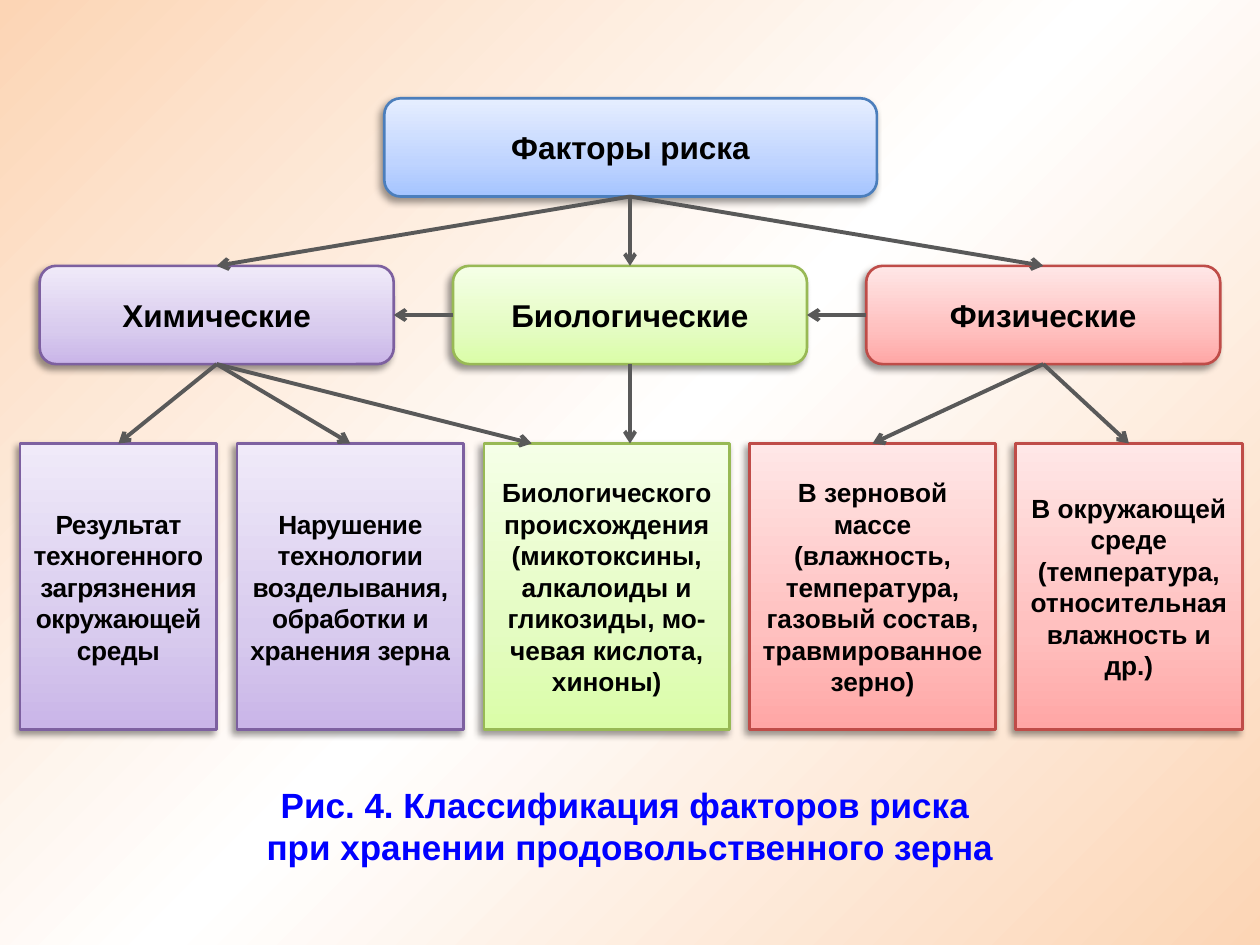
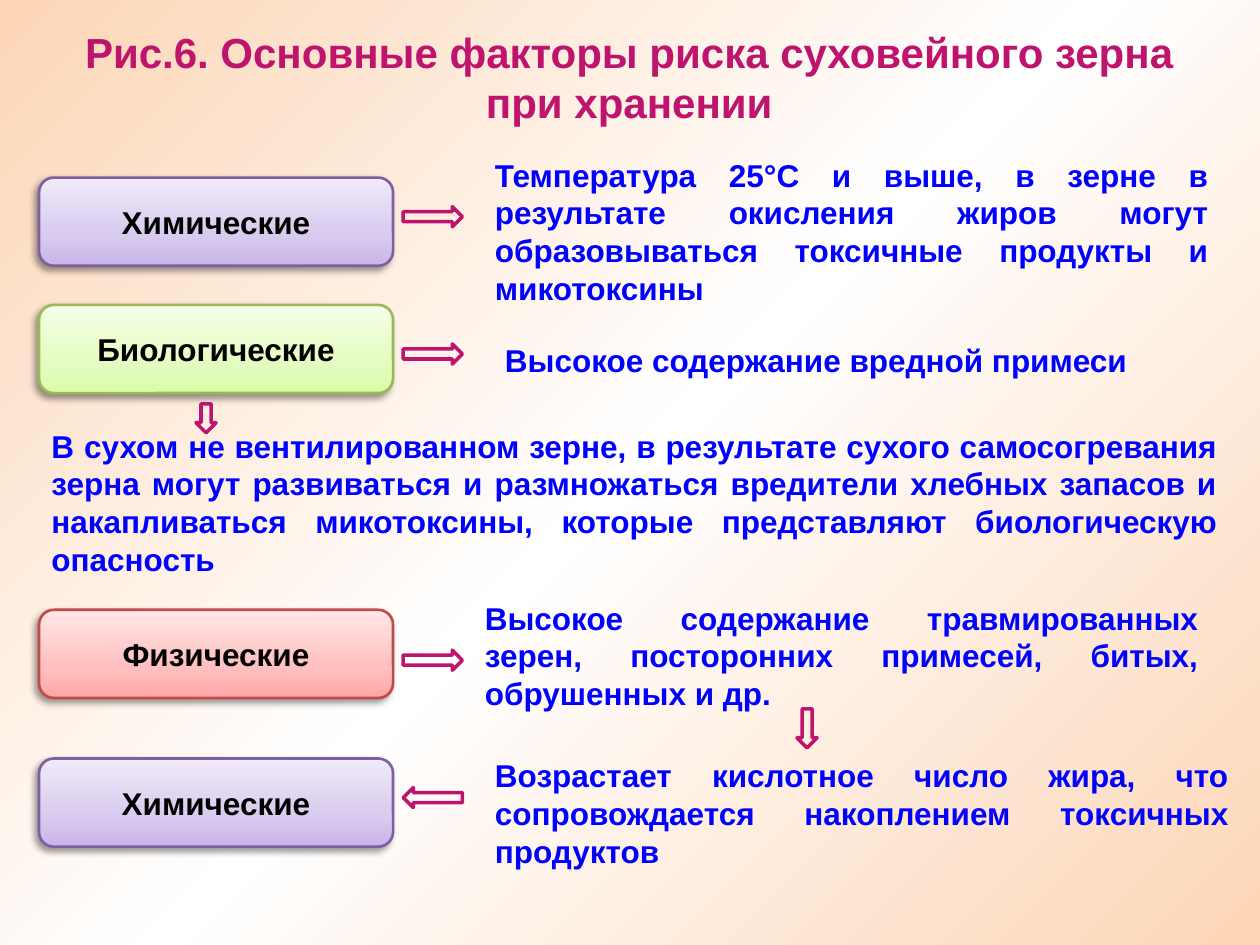
from lxml import etree
from pptx import Presentation
from pptx.dml.color import RGBColor
from pptx.enum.shapes import MSO_CONNECTOR, MSO_SHAPE
from pptx.enum.text import MSO_ANCHOR, MSO_AUTO_SIZE, PP_ALIGN
from pptx.oxml.ns import qn
from pptx.util import Inches, Pt

ROUND = MSO_SHAPE.ROUNDED_RECTANGLE
RECT = MSO_SHAPE.RECTANGLE
ARROW = MSO_SHAPE.RIGHT_ARROW
LINE = MSO_CONNECTOR.STRAIGHT
TOP, MIDDLE = MSO_ANCHOR.TOP, MSO_ANCHOR.MIDDLE
CENTER, JUSTIFY = PP_ALIGN.CENTER, PP_ALIGN.JUSTIFY
GROW = MSO_AUTO_SIZE.SHAPE_TO_FIT_TEXT

FONT = "Arial"
BLACK, BLUE, PINK, GRAY = "000000", "0000FF", "BE146D", "595959"
PEACH = [(0, "FCD5B5"), (50, "FFFFFF"), (100, "FCD5B5")]
THEMES = {
    "root": ("4B7EBC", "A4C4FF", "BFD4FF", "E6EEFF"),
    "chem": ("7D60A0", "C9B5E8", "D8CBEE", "F0EAF9"),
    "bio": ("98B955", "DAFDA7", "E4FCC2", "F5FFE7"),
    "phys": ("BF4C48", "FFA6A5", "FFC0BF", "FFE7E7"),
}
NAMES = {"chem": "Химические", "bio": "Биологические", "phys": "Физические"}

LEAVES = [
    ("chem", 1.56, -0.2, "Результат техногенного загрязнения окружающей среды"),
    ("chem", 1.8, -0.2, "Нарушение технологии возделывания, обработки и хранения зерна"),
    ("bio", 1.95, 0, "Биологического происхождения (микотоксины, алкалоиды и "
                     "гликозиды, мо-чевая кислота, хиноны)"),
    ("phys", 1.95, 0, "В зерновой массе (влажность, температура, газовый состав, "
                      "травмированное зерно)"),
    ("phys", 1.8, 0, "В окружающей среде (температура, относительная влажность и др.)"),
]
CAPTION = ["Рис. 4. Классификация факторов риска ",
           "при хранении продовольственного зерна"]
TITLE = ["Рис.6. Основные факторы риска суховейного зерна при хранении"]

RISKS = [("chem", 1.41), ("bio", 2.42), ("phys", 4.84), ("chem", 6.02)]
NOTES = [
    ((3.83, 1.25, 5.86, 1.17),
     "Температура 25°С и выше, в зерне в результате окисления жиров могут "
     "образовываться токсичные продукты и микотоксины"),
    ((3.91, 2.58, 5.86, 0.55), "Высокое содержание вредной примеси"),
    ((0.31, 3.36, 9.45, 1.25),
     "В сухом не вентилированном зерне, в результате сухого самосогревания зерна "
     "могут развиваться и размножаться вредители хлебных запасов и накапливаться "
     "микотоксины, которые представляют биологическую опасность"),
    ((3.75, 4.69, 5.86, 1.02),
     "Высокое содержание травмированных зерен, посторонних примесей, битых, "
     "обрушенных и др."),
    ((3.83, 5.94, 6.02, 1.02),
     "Возрастает кислотное число жира, что сопровождается накоплением токсичных "
     "продуктов"),
]
ARROWS = [(3.2, 1.64, 0.47, 0), (3.2, 2.73, 0.47, 0), (1.52, 3.24, 0.23, 90),
          (3.2, 5.16, 0.47, 0), (6.25, 5.7, 0.31, 90), (3.2, 6.25, 0.47, 180)]

LEFT, WIDE, GAP = 0.31, 2.81, 0.16
MID, STEP = 5, 3.28
ROOT_Y, KIND_Y, LEAF_Y = 0.78, 2.11, 3.52
TALL, LEAF_H = 0.78, 2.27


def color(code):
    return RGBColor.from_string(code)


def sub(node, tag, **attrs):
    return etree.SubElement(node, qn(tag), {k: str(v) for k, v in attrs.items()})


def blend(fill, node, stops, angle):
    fill.gradient()
    fill.gradient_angle = angle
    ramp = node.find(".//" + qn("a:gsLst"))
    for stop in list(ramp):
        ramp.remove(stop)
    for pos, code in stops:
        sub(sub(ramp, "a:gs", pos=pos * 1000), "a:srgbClr", val=code)


def shade(shape):
    shape.shadow.inherit = False
    effects = shape._element.spPr.find(qn("a:effectLst"))
    drop = sub(effects, "a:outerShdw", blurRad=Pt(4), dist=Pt(3),
               dir=135 * 60000, rotWithShape=0)
    sub(sub(drop, "a:srgbClr", val=BLACK), "a:alpha", val=40000)


def write(shape, lines, size, code, align, anchor, track=0):
    frame = shape.text_frame
    frame.word_wrap = True
    frame.vertical_anchor = anchor
    for i, line in enumerate(lines):
        para = frame.add_paragraph() if i else frame.paragraphs[0]
        para.alignment = align
        run = para.add_run()
        run.text = line
        font = run.font
        font.name, font.size, font.bold = FONT, Pt(size), True
        font.color.rgb = color(code)
        if track:
            run._r.get_or_add_rPr().set("spc", str(round(track * 100)))


def box(slide, kind, form, place, text, size=18, track=0):
    edge, *tones = THEMES[kind]
    shape = slide.shapes.add_shape(form, *map(Inches, place))
    blend(shape.fill, shape._element, zip((0, 35, 100), tones), 90)
    shape.line.color.rgb = color(edge)
    shape.line.width = Pt(1.5)
    shade(shape)
    write(shape, [text], size, BLACK, CENTER, MIDDLE, track)


def label(slide, place, lines, size, code, align=CENTER, anchor=TOP):
    shape = slide.shapes.add_textbox(*map(Inches, place))
    write(shape, lines, size, code, align, anchor)
    if anchor == TOP:
        shape.text_frame.auto_size = GROW


def link(slide, start, end):
    line = slide.shapes.add_connector(LINE, *map(Inches, start + end))
    line.line.color.rgb = color(GRAY)
    line.line.width = Pt(2.25)
    sub(line.line._get_or_add_ln(), "a:tailEnd", type="arrow")
    sub(line._element.spPr, "a:effectLst")


def point(slide, x, y, wide, turn):
    shape = slide.shapes.add_shape(ARROW, *map(Inches, (x, y, wide, 0.16)))
    shape.rotation = turn
    shape.fill.background()
    shape.line.color.rgb = color(PINK)
    shape.line.width = Pt(2)
    shape.shadow.inherit = False


def page(deck):
    slide = deck.slides.add_slide(deck.slide_layouts[6])
    blend(slide.background.fill, slide._element, PEACH, 315)
    return slide


def draw_tree(slide):
    box(slide, "root", ROUND, (3.05, ROOT_Y, 3.91, TALL), "Факторы риска")
    mids = {kind: MID + (i - 1) * STEP for i, kind in enumerate(NAMES)}
    for kind, mid in mids.items():
        box(slide, kind, ROUND, (mid - WIDE / 2, KIND_Y, WIDE, TALL), NAMES[kind])
        link(slide, (MID, ROOT_Y + TALL), (mid, KIND_Y))
    for kind in ("bio", "phys"):
        edge = mids[kind] - WIDE / 2
        level = KIND_Y + TALL / 2
        link(slide, (edge, level), (edge - STEP + WIDE, level))
    ends = [("chem", 4.22)]
    x = GAP
    for kind, wide, track, text in LEAVES:
        box(slide, kind, RECT, (x, LEAF_Y, wide, LEAF_H), text, 15, track)
        ends.append((kind, MID if kind == "bio" else x + wide / 2))
        x += wide + GAP
    for kind, end in ends:
        link(slide, (mids[kind], KIND_Y + TALL), (end, LEAF_Y))
    label(slide, (1.17, 6.17, 7.66, 0.77), CAPTION, 20, BLUE)


def draw_risks(slide):
    label(slide, (0.23, 0.16, 9.53, 0.91), TITLE, 24, PINK)
    for kind, y in RISKS:
        box(slide, kind, ROUND, (LEFT, y, WIDE, 0.7), NAMES[kind])
    for arrow in ARROWS:
        point(slide, *arrow)
    for place, text in NOTES:
        label(slide, place, [text], 18, BLUE, JUSTIFY, MIDDLE)


def main():
    deck = Presentation()
    deck.slide_width, deck.slide_height = Inches(10), Inches(7.5)
    draw_tree(page(deck))
    draw_risks(page(deck))
    deck.save("out.pptx")


if __name__ == "__main__":
    main()
